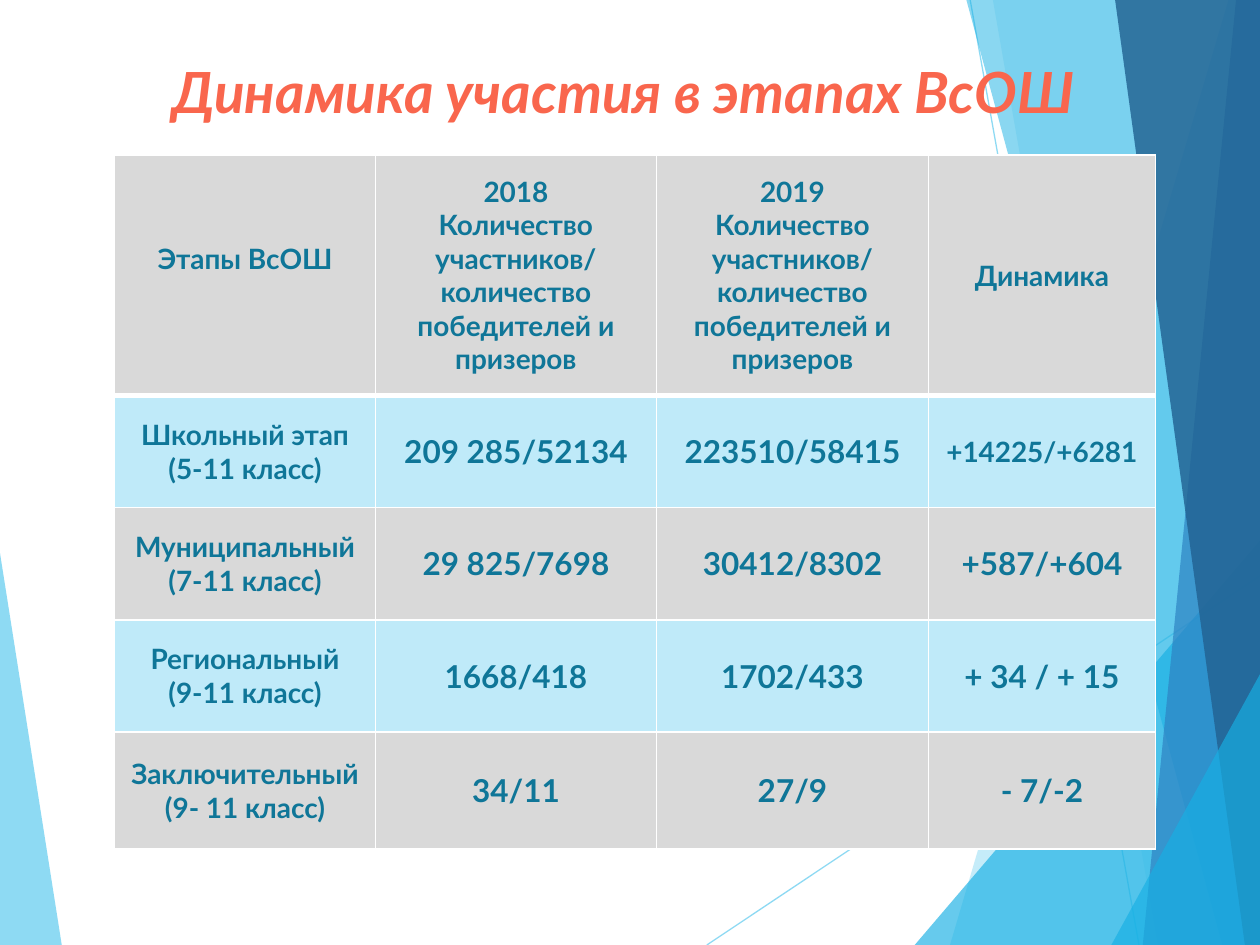
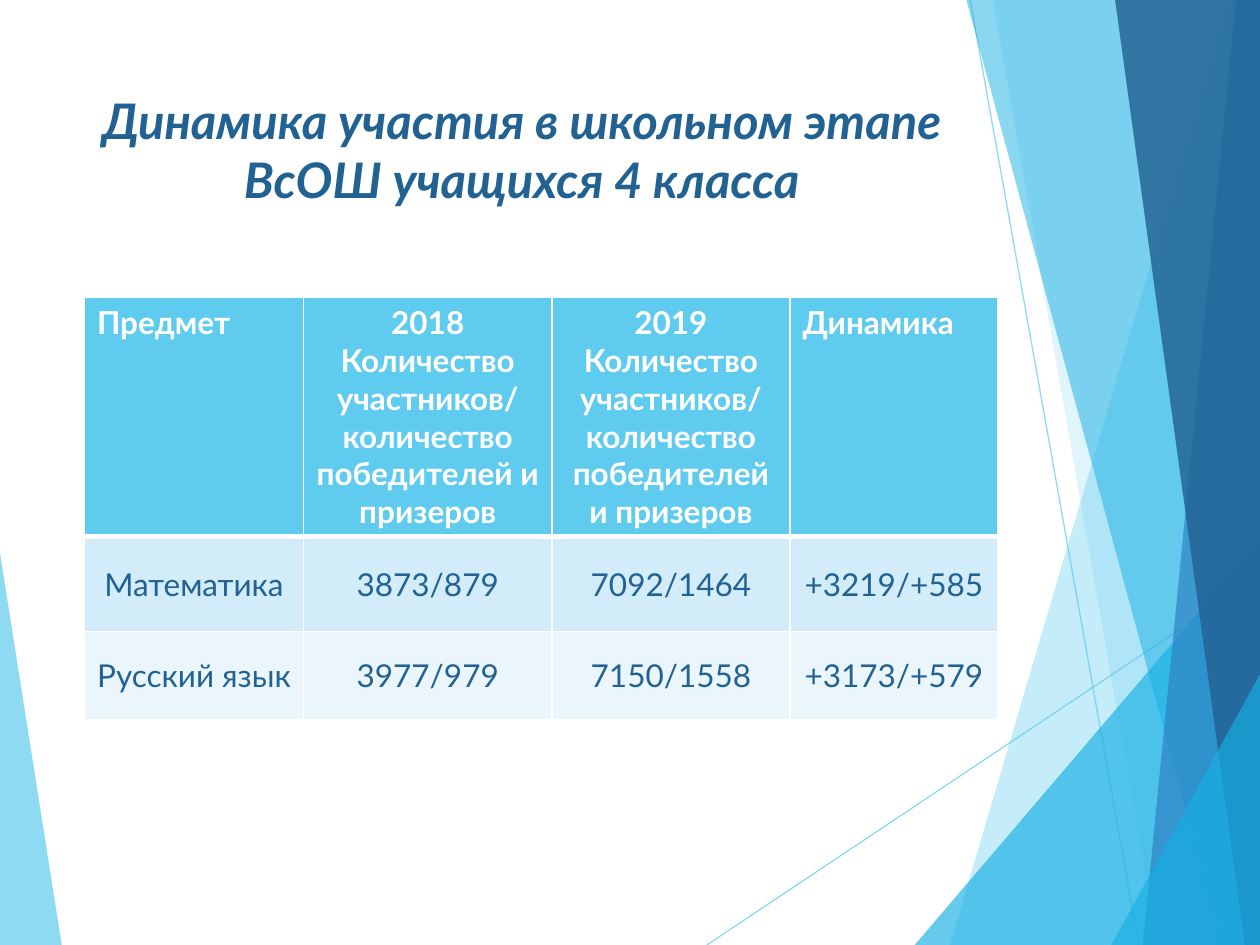
from lxml import etree
from pptx import Presentation
from pptx import util as u
from pptx.dml.color import RGBColor
from pptx.enum import shapes, text
from pptx.oxml.ns import qn

COLORS = {
    "sky": "5FCBEF", "cyan": "17B0E4", "blue": "2E83C3", "navy": "226292",
    "coral": "F9664D", "teal": "0F7698", "white": "FFFFFF", "gray": "D9D9D9",
    "ice": "BFEAF9", "pale": "D2ECF9", "frost": "EAF6FC",
}
RGB = {name: RGBColor.from_string(value) for name, value in COLORS.items()}
FONT = "Lato"

# Background facets from back to front: colour, opacity in percent, corners
FACETS = [
    ("sky", 70, [(0, 4.39), (0.49, 7.5), (0, 7.5)]),
    ("sky", 36, [(9.75, 0), (7.54, 7.5), (10, 7.5), (10, 0)]),
    ("sky", 20, [(7.88, 0), (9.19, 7.5), (10, 7.5), (10, 0)]),
    ("cyan", 66, [(7.26, 7.5), (10, 4.29), (10, 7.5)]),
    ("cyan", 50, [(7.67, 0), (9.7, 7.5), (10, 7.5), (10, 0)]),
    ("blue", 70, [(9.81, 0), (9.07, 7.5), (10, 7.5), (10, 0)]),
    ("navy", 82, [(8.85, 0), (9.88, 7.5), (10, 7.5), (10, 0)]),
    ("cyan", 66, [(8.82, 7.5), (10, 5.35), (10, 7.5)]),
]
RAYS = [(5.61, 7.5, 10, 4.57), (7.7, 0, 9.04, 7.5)]

COUNTS = "Количество участников/ количество победителей и призеров"
HEADINGS = ["2018\n" + COUNTS, "2019\n" + COUNTS, "Динамика"]

SLIDES = [
    {
        "title": "Динамика участия в этапах ВсОШ ",
        "title_box": (0.69, 0.4, 8.62, 0.83), "title_size": 32.4, "title_color": "coral",
        "table_at": (0.91, 1.23),
        "columns": [2.07, 2.23, 2.16, 1.8],
        "heights": [1.91, 0.89, 0.89, 0.89, 0.93],
        "margins": (0.07, 0),
        "fills": ["gray", "ice", "gray", "ice", "gray"],
        "head_color": "teal", "body_color": "teal", "body_bold": True,
        "head_size": 16, "label_size": 16,
        "rows": [
            ["Этапы ВсОШ"] + HEADINGS,
            ["Школьный этап\n(5-11 класс)", "209 285/52134", "223510/58415", "+14225/+6281"],
            ["Муниципальный\n(7-11 класс)", "29 825/7698", "30412/8302", "+587/+604"],
            ["Региональный\n(9-11 класс)", "1668/418", "1702/433", "+ 34 / + 15"],
            ["Заключительный\n(9- 11 класс)", "34/11", "27/9", "- 7/-2"],
        ],
    },
    {
        "title": "Динамика участия в школьном этапе ВсОШ учащихся 4 класса",
        "title_box": (0.67, 0.67, 6.94, 1.44), "title_size": 28, "title_color": "navy",
        "table_at": (0.67, 2.36),
        "columns": [1.74, 1.97, 1.89, 1.65],
        "heights": [1.9, 0.75, 0.7],
        "margins": (0.1, 0.05),
        "fills": ["sky", "pale", "frost"],
        "head_color": "white", "body_color": "navy", "body_bold": False,
        "head_size": 18, "label_size": 18,
        "rows": [
            ["Предмет"] + HEADINGS,
            ["Математика", "3873/879", "7092/1464", "+3219/+585"],
            ["Русский язык", "3977/979", "7150/1558", "+3173/+579"],
        ],
    },
]


def set_opacity(shape, percent):
    for color in shape._element.spPr.iter(qn("a:srgbClr")):
        etree.SubElement(color, qn("a:alpha"), val=str(percent * 1000))


def write(frame, words, align, size, color, bold, italic=False):
    """Fill a text frame, one paragraph for each line of words."""
    frame.word_wrap = True
    frame.text = words
    for paragraph in frame.paragraphs:
        paragraph.alignment = align
        font = paragraph.runs[0].font
        looks = {"name": FONT, "size": u.Pt(size), "bold": bold, "italic": italic}
        for key, value in looks.items():
            setattr(font, key, value)
        font.color.rgb = RGB[color]


prs = Presentation()
prs.slide_width, prs.slide_height = u.Inches(10), u.Inches(7.5)

for content in SLIDES:
    slide = prs.slides.add_slide(prs.slide_layouts[6])

    for number, (color, opacity, corners) in enumerate(FACETS):
        points = [(u.Inches(x), u.Inches(y)) for x, y in corners]
        builder = slide.shapes.build_freeform(*points[0])
        builder.add_line_segments(points[1:])
        facet = builder.convert_to_shape()
        facet.shadow.inherit = False
        facet.fill.solid()
        facet.fill.fore_color.rgb = RGB[color]
        facet.line.fill.background()
        set_opacity(facet, opacity)
        if number == 0:  # the rays lie just above the left facet
            for ends in RAYS:
                ray = slide.shapes.add_connector(
                    shapes.MSO_CONNECTOR.STRAIGHT, *map(u.Inches, ends))
                ray.line.color.rgb = RGB["sky"]
                ray.line.width = u.Pt(0.75)
                set_opacity(ray, 70)
                etree.SubElement(ray._element.spPr, qn("a:effectLst"))

    title = slide.shapes.add_textbox(*map(u.Inches, content["title_box"]))
    write(title.text_frame, content["title"], text.PP_ALIGN.CENTER,
          content["title_size"], content["title_color"], True, True)

    columns, heights = content["columns"], content["heights"]
    stages = slide.shapes.add_table(
        len(heights), len(columns), *map(u.Inches, content["table_at"]),
        u.Inches(sum(columns)), u.Inches(sum(heights))).table
    for column, width in zip(stages.columns, columns):
        column.width = u.Inches(width)
    for row, height in zip(stages.rows, heights):
        row.height = u.Inches(height)

    side, edge = map(u.Inches, content["margins"])
    for r, values in enumerate(content["rows"]):
        for c, value in enumerate(values):
            cell = stages.cell(r, c)
            head = r == 0
            plain_head = head and content["head_color"] == "white"
            align = text.PP_ALIGN.CENTER
            if plain_head and c in (0, 3):
                align = text.PP_ALIGN.LEFT
            size = 18
            if head:
                size = content["head_size"]
            elif c == 0 or value == "+14225/+6281":
                size = content["label_size"]
            write(cell.text_frame, value, align, size,
                  content["head_color" if head else "body_color"],
                  head or content["body_bold"])
            layout = {
                "margin_left": side, "margin_right": side,
                "margin_top": edge, "margin_bottom": edge,
                "vertical_anchor": text.MSO_ANCHOR.TOP if plain_head else text.MSO_ANCHOR.MIDDLE,
            }
            if value == "Этапы ВсОШ":
                layout["margin_bottom"] = u.Inches(0.27)
            for key, setting in layout.items():
                setattr(cell, key, setting)

            properties = cell._tc.get_or_add_tcPr()
            for tag in ("lnL", "lnR", "lnT", "lnB"):
                thick = (head and tag == "lnB") or (r == 1 and tag == "lnT")
                border = etree.SubElement(properties, qn("a:" + tag), w=str(u.Pt(3 if thick else 1)))
                paint = etree.SubElement(border, qn("a:solidFill"))
                etree.SubElement(paint, qn("a:srgbClr"), val=COLORS["white"])
            cell.fill.solid()
            cell.fill.fore_color.rgb = RGB[content["fills"][r]]

prs.save("out.pptx")
